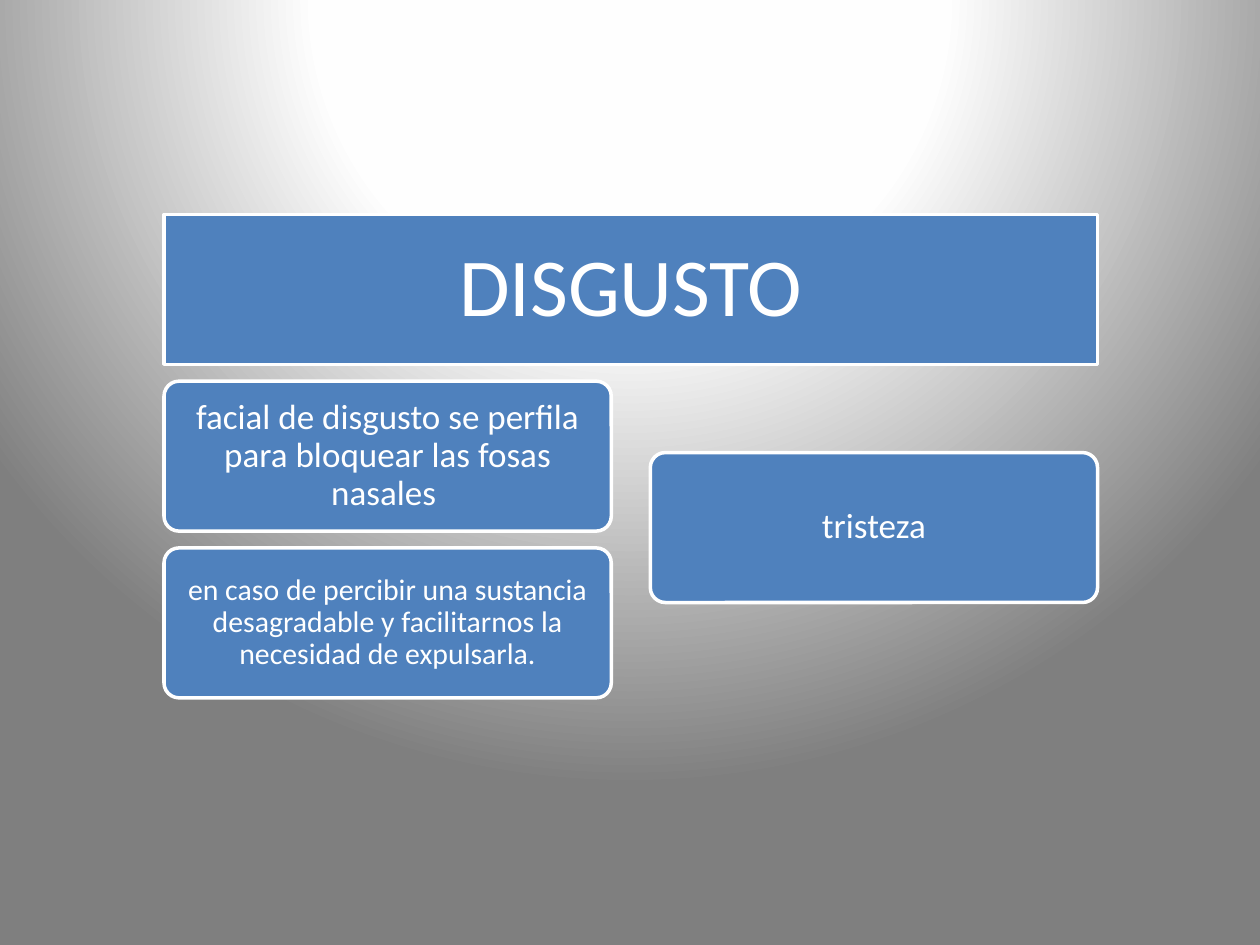
from pptx import Presentation
from pptx.dml.color import RGBColor
from pptx.enum.shapes import MSO_SHAPE
from pptx.enum.text import MSO_ANCHOR, MSO_AUTO_SIZE, PP_ALIGN
from pptx.oxml import parse_xml
from pptx.oxml.ns import nsdecls, qn
from pptx.util import Pt

ROUNDED = MSO_SHAPE.ROUNDED_RECTANGLE
MIDDLE = MSO_ANCHOR.MIDDLE
NO_FIT = MSO_AUTO_SIZE.NONE
CENTER = PP_ALIGN.CENTER

COLORS = {"box": "4F81BD", "white": "FFFFFF", "glow": "FEFEFE", "edge": "7F7F7F"}
FONT = "Calibri"

LEFT, TOP = 93.7, 122.5
WIDTH, COL_W, BOX_H = 533.5, 255.6, 85.7
ROW_STEP = 95.3
RIGHT_COL = LEFT + WIDTH - COL_W
RIGHT_TOP = 258.6


def write_box(sp, text, size, inset):
    sp.shadow.inherit = False
    sp.fill.solid()
    sp.fill.fore_color.rgb = RGBColor.from_string(COLORS["box"])
    sp.line.color.rgb = RGBColor.from_string(COLORS["white"])
    sp.line.width = Pt(2)
    tf = sp.text_frame
    tf.word_wrap = True
    tf.auto_size = NO_FIT
    tf.vertical_anchor = MIDDLE
    tf.margin_left = tf.margin_right = Pt(inset)
    tf.margin_top = tf.margin_bottom = Pt(inset)
    p = tf.paragraphs[0]
    p.alignment = CENTER
    p.line_spacing = 0.9
    r = p.add_run()
    r.text = text
    r.font.name = FONT
    r.font.size = Pt(size)
    r.font.color.rgb = RGBColor.from_string(COLORS["white"])


prs = Presentation()
prs.slide_width, prs.slide_height = Pt(720), Pt(540)
s = prs.slides.add_slide(prs.slide_layouts[5])

s.background.fill.gradient()
grad = s.background._cSld.find(".//" + qn("a:gradFill"))
stops = "".join(
    f'<a:gs pos="{pos * 1000}"><a:srgbClr val="{COLORS[name]}"/></a:gs>'
    for pos, name in [(0, "white"), (40, "glow"), (100, "edge")]
)
grad.getparent().replace(grad, parse_xml(
    f'<a:gradFill {nsdecls("a")} rotWithShape="1"><a:gsLst>{stops}</a:gsLst>'
    '<a:path path="circle"><a:fillToRect l="50000" t="-80000" r="50000" b="180000"/>'
    '</a:path></a:gradFill>'
))

title = s.shapes.title
title.left, title.top = Pt(LEFT), Pt(TOP)
title.width, title.height = Pt(WIDTH), Pt(BOX_H)
title._element.spPr.append(parse_xml(
    f'<a:prstGeom {nsdecls("a")} prst="roundRect"><a:avLst>'
    '<a:gd name="adj" fmla="val 10000"/></a:avLst></a:prstGeom>'
))
write_box(title, "DISGUSTO", size=47, inset=16)

boxes = [
    ("facial de disgusto se perfila para bloquear las fosas nasales ",
     LEFT, TOP + ROW_STEP, 20, 8),
    ("en caso de percibir una sustancia desagradable y facilitarnos la necesidad de expulsarla.",
     LEFT, TOP + 2 * ROW_STEP, 17, 7),
    ("tristeza", RIGHT_COL, RIGHT_TOP, 20, 8),
]
for text, x, y, size, inset in boxes:
    sp = s.shapes.add_shape(ROUNDED, Pt(x), Pt(y), Pt(COL_W), Pt(BOX_H))
    sp.adjustments[0] = 0.1
    write_box(sp, text, size=size, inset=inset)

prs.save("out.pptx")
